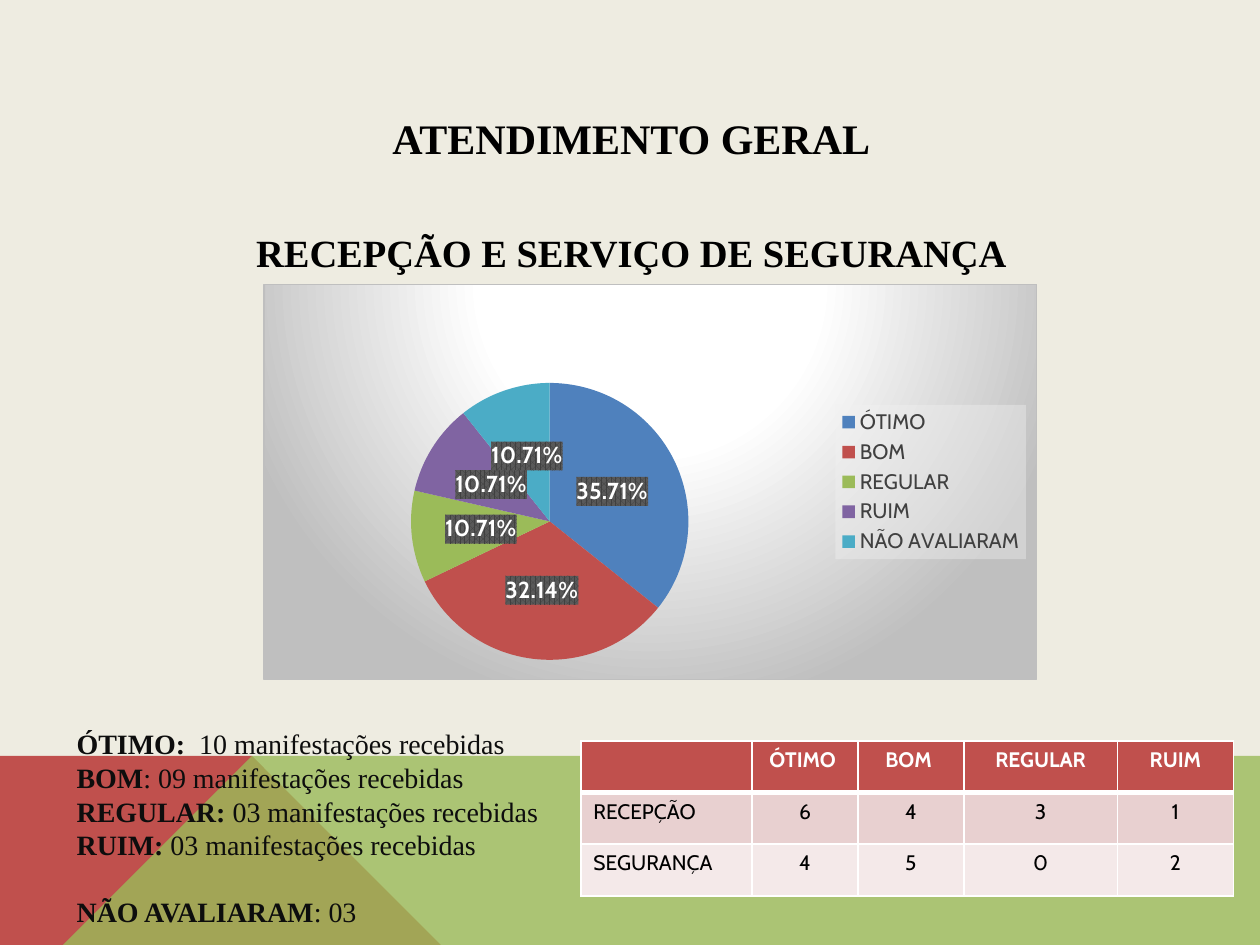
from lxml import etree
from pptx import Presentation
from pptx.chart.data import CategoryChartData
from pptx.dml.color import RGBColor
from pptx.enum.chart import XL_CHART_TYPE as Kind, XL_LABEL_POSITION as Spot
from pptx.enum.chart import XL_LEGEND_POSITION as Side
from pptx.enum.text import PP_ALIGN as Align
from pptx.oxml import parse_xml
from pptx.oxml.ns import nsdecls, qn
from pptx.util import Inches, Pt

SERIF, SANS = "Times New Roman", "Cabin"
RED, GREEN, WHITE, BLACK = "C0504D", "9BBB59", "FFFFFF", "000000"
NS = nsdecls("a", "c")


def rgb(code):
    return RGBColor.from_string(code)


def style(font, size, color, name, bold=False):
    font.size, font.name, font.bold = Pt(size), name, bold
    font.color.rgb = rgb(color)


def write(para, text, align=Align.LEFT, before=0, **look):
    """Add one run to a paragraph and set the paragraph's format."""
    para.alignment, para.space_before = align, Pt(before)
    run = para.add_run()
    run.text = text
    style(run.font, **look)


def add_box(slide, x, y, w, h):
    frame = slide.shapes.add_textbox(*map(Inches, (x, y, w, h))).text_frame
    frame.word_wrap = True
    return frame


def next_para(frame, first):
    return frame.paragraphs[0] if first else frame.add_paragraph()


def add_band(slide, points, color, alpha=100):
    pen = slide.shapes.build_freeform(*points[0], scale=Inches(1))
    pen.add_line_segments(points[1:], close=True)
    band = pen.convert_to_shape()
    band.shadow.inherit = False
    band.line.fill.background()
    band.fill.solid()
    band.fill.fore_color.rgb = rgb(color)
    if alpha < 100:
        tone = band.fill._xPr.find(".//" + qn("a:srgbClr"))
        etree.SubElement(tone, qn("a:alpha")).set("val", str(alpha * 1000))


def tint(code, alpha=100):
    return f'<a:srgbClr val="{code}"><a:alpha val="{alpha * 1000}"/></a:srgbClr>'


def paint(node, body):
    """Give a chart part its fill and line, just before its text format."""
    props = parse_xml(f"<c:spPr {NS}>{body}</c:spPr>")
    node.find(qn("c:txPr")).addprevious(props)


def place_plot(chart, **area):
    plot = chart._chartSpace.find(".//" + qn("c:plotArea"))
    for old in plot.findall(qn("c:layout")):
        plot.remove(old)
    sizes = "".join(f'<c:{k} val="{v}"/>' for k, v in area.items())
    plot.insert(0, parse_xml(
        f'<c:layout {NS}><c:manualLayout><c:layoutTarget val="inner"/>'
        f'<c:xMode val="edge"/><c:yMode val="edge"/>{sizes}'
        "</c:manualLayout></c:layout>"))


def add_pie(slide, slices, x, y, w, h):
    data = CategoryChartData()
    data.categories = [name for name, _, _ in slices]
    data.add_series("Series 1", [val for _, val, _ in slices])
    chart = slide.shapes.add_chart(
        Kind.PIE, *map(Inches, (x, y, w, h)), data).chart
    chart.has_title = False
    style(chart.font, 10, BLACK, SANS)
    stops = "".join(f'<a:gs pos="{pos * 1000}">{tint(code)}</a:gs>'
                    for pos, code in ((0, WHITE), (39, WHITE), (100, "BFBFBF")))
    paint(chart._chartSpace,
          f'<a:gradFill><a:gsLst>{stops}</a:gsLst><a:path path="circle">'
          '<a:fillToRect l="50000" t="-80000" r="50000" b="180000"/></a:path>'
          f'</a:gradFill><a:ln w="9525"><a:solidFill>{tint("BFBFBF")}'
          "</a:solidFill></a:ln>")
    place_plot(chart, x=0.19, y=0.25, w=0.36, h=0.7)

    chart.has_legend = True
    legend = chart.legend
    legend.position, legend.include_in_layout = Side.RIGHT, False
    style(legend.font, 12, "404040", SANS)
    paint(legend._element, f'<a:solidFill>{tint("F2F2F2", 39)}</a:solidFill>')

    plot = chart.plots[0]
    plot.vary_by_categories = True
    for i, (_, _, color) in enumerate(slices):
        fill = plot.series[0].points[i].format.fill
        fill.solid()
        fill.fore_color.rgb = rgb(color)
    labels = plot.series[0].data_labels
    labels.show_value, labels.show_percentage = True, False
    labels.number_format, labels.number_format_is_linked = '0.00"%"', False
    labels.position = Spot.CENTER
    style(labels.font, 13.3, WHITE, SANS, True)
    paint(labels._element,
          f'<a:pattFill prst="pct75"><a:fgClr>{tint("404040")}</a:fgClr>'
          f'<a:bgClr>{tint("595959")}</a:bgClr></a:pattFill>')


def edge(cell, low):
    """Draw white cell borders, the bottom one `low` points wide."""
    props = cell._tc.get_or_add_tcPr()
    for i, (tag, width) in enumerate(zip("LRTB", (1, 1, 1, low))):
        props.insert(i, parse_xml(
            f'<a:ln{tag} {NS} w="{Pt(width)}"><a:solidFill>{tint(WHITE)}'
            f"</a:solidFill></a:ln{tag}>"))


def add_grid(slide, rows, widths, height, x, y):
    grid = slide.shapes.add_table(
        len(rows), len(widths), Inches(x), Inches(y),
        Inches(sum(widths)), Inches(height * len(rows))).table
    for col, width in zip(grid.columns, widths):
        col.width = Inches(width)
    for r, (row, shade) in enumerate(zip(rows, (RED, "E8D0D0", "F4E9E9"))):
        grid.rows[r].height = Inches(height)
        for c, text in enumerate(row):
            cell = grid.cell(r, c)
            cell.fill.solid()
            cell.fill.fore_color.rgb = rgb(shade)
            edge(cell, 1 if r else 3)
            if text:
                write(cell.text_frame.paragraphs[0], text,
                      align=Align.CENTER if c else Align.LEFT,
                      size=12, name=SANS, bold=r == 0,
                      color=BLACK if r else WHITE)


def main():
    deck = Presentation()
    deck.slide_width, deck.slide_height = Inches(10), Inches(7.5)
    slide = deck.slides.add_slide(deck.slide_layouts[6])
    slide.background.fill.solid()
    slide.background.fill.fore_color.rgb = rgb("EEECE1")

    add_band(slide, [(0, 7.5), (0, 5.52), (2.23, 5.52), (3.91, 7.5)], RED)
    add_band(slide, [(0, 7.5), (2.23, 5.52), (10, 5.53), (10, 7.5)], GREEN, 80)

    heads = add_box(slide, 0.9, 0.84, 8.22, 1.4)
    for text, size, gap in (("ATENDIMENTO GERAL", 24, 0),
                            ("RECEPÇÃO E SERVIÇO DE SEGURANÇA", 22, 38)):
        write(next_para(heads, not gap), text, align=Align.CENTER, before=gap,
              size=size, color=BLACK, name=SERIF, bold=True)

    add_pie(slide, [("ÓTIMO", 35.71, "4F81BD"), ("BOM", 32.14, RED),
                    ("REGULAR", 10.71, GREEN), ("RUIM", 10.71, "8064A2"),
                    ("NÃO AVALIARAM", 10.71, "4BACC6")],
            2.09, 2.25, 6.14, 3.15)

    notes = add_box(slide, 0.51, 5.72, 4.25, 1.78)
    lines = [("ÓTIMO:", "  10 manifestações recebidas", 0),
             ("BOM", ": 09 manifestações recebidas", 0),
             ("REGULAR: ", "03 manifestações recebidas", 0),
             ("RUIM: ", "03 manifestações recebidas", 0),
             ("NÃO AVALIARAM", ": 03", 19)]
    for i, (label, count, gap) in enumerate(lines):
        para = next_para(notes, i == 0)
        for text, bold in ((label, True), (count, False)):
            write(para, text, before=gap, size=16, color="0D0D0D",
                  name=SERIF, bold=bold)

    add_grid(slide, [("", "ÓTIMO ", "BOM ", "REGULAR", "RUIM"),
                     ("RECEPÇÃO", "6", "4", "3", "1"),
                     ("SEGURANÇA", "4", "5", "0", "2")],
             (1.36, 0.84, 0.84, 1.22, 0.92), 0.41, 4.61, 5.88)
    deck.save("out.pptx")


if __name__ == "__main__":
    main()
